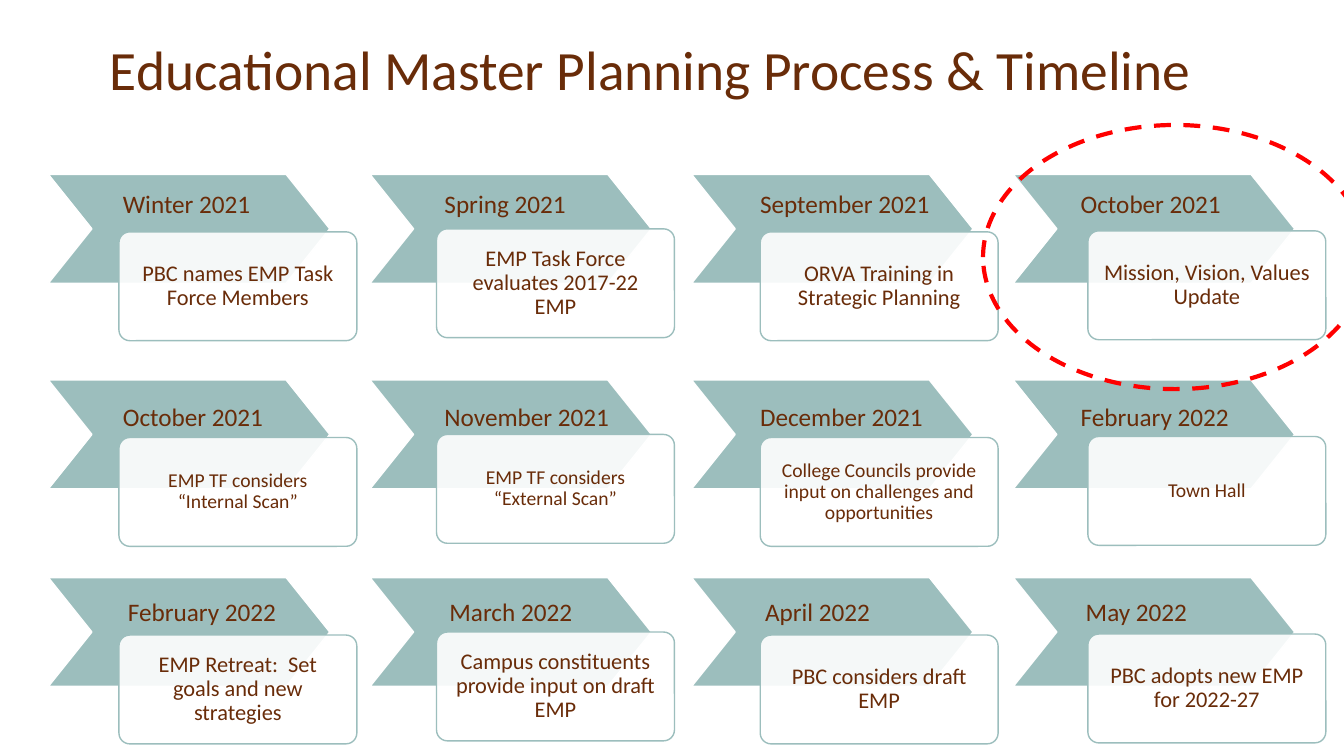
from dataclasses import dataclass
from lxml.etree import SubElement
from pptx import Presentation
from pptx.dml.color import RGBColor as Rgb
from pptx.enum.dml import MSO_LINE_DASH_STYLE as Dash
from pptx.enum.shapes import MSO_AUTO_SHAPE_TYPE as Kind
from pptx.enum.text import MSO_ANCHOR as Anchor, MSO_AUTO_SIZE as Fit, PP_ALIGN as Align
from pptx.oxml.ns import qn
from pptx.util import Inches, Pt

TITLE = "Educational Master Planning Process & Timeline"

STEPS = [
    [
        ("Winter 2021", 1.48, "PBC names EMP Task Force Members"),
        ("Spring 2021", 1.42, "EMP Task Force evaluates 2017-22 EMP"),
        ("September 2021", 1.9, "ORVA Training in Strategic Planning"),
        ("October 2021", 1.61, "Mission, Vision, Values Update"),
    ],
    [
        ("October 2021", 1.61, "EMP TF considers “Internal Scan”"),
        ("November 2021", 1.85, "EMP TF considers “External Scan”"),
        ("December 2021", 1.84, "College Councils provide input on challenges and opportunities"),
        ("February 2022", 1.69, "Town Hall"),
    ],
    [
        ("February 2022", 1.69, "EMP Retreat:  Set goals and new strategies"),
        ("March 2022", 1.43, "Campus constituents provide input on draft EMP"),
        ("April 2022", 1.25, "PBC considers draft EMP"),
        ("May 2022", 1.22, "PBC adopts new EMP for 2022-27"),
    ],
]


@dataclass(frozen=True)
class Theme:
    font: str = "Calibri"
    ink: str = "692C09"
    teal: str = "9CBEBD"
    white: str = "FFFFFF"
    red: str = "FF0000"
    title: float = 39.6
    date: int = 18
    large: int = 16
    small: int = 14


LOOK = Theme()
WIDE, HIGH = 13.33, 7.5
LEFT, PITCH = 0.48, 3.19
ARROW, CARD, TALL = 2.79, 2.36, 1.08
CARDS = [(0.7, 0.57), (0.66, 0.54), (0.68, 0.57), (0.74, 0.56)]
DATES = [0.64, 0.64, 0.58, 0.57]
ROWS = [
    (1.73, 0, 0.09, LOOK.large, 0.12),
    (3.77, 0, 0.16, LOOK.small, 0.11),
    (5.73, 0.05, 0.14, LOOK.large, 0.12),
]


def write(frame, text, size, align=Align.LEFT, space=1.0):
    para = frame.paragraphs[0]
    para.alignment = align
    para.line_spacing = space
    run = para.add_run()
    run.text = text
    run.font.name = LOOK.font
    run.font.size = Pt(size)
    run.font.color.rgb = Rgb.from_string(LOOK.ink)


def draw(shapes, kind, box, fill, line, weight=1, bend=None):
    shape = shapes.add_shape(kind, *map(Inches, box))
    shape.shadow.inherit = False
    if fill:
        shape.fill.solid()
        shape.fill.fore_color.rgb = Rgb.from_string(fill)
    else:
        shape.fill.background()
    shape.line.color.rgb = Rgb.from_string(line)
    shape.line.width = Pt(weight)
    if bend is not None:
        shape.adjustments[0] = bend
    return shape


def add_card(shapes, box, text, size, inset):
    card = draw(shapes, Kind.ROUNDED_RECTANGLE, box, LOOK.white, LOOK.teal, bend=0.1)
    tint = card.fill._xPr.find(qn("a:solidFill"))[0]
    SubElement(tint, qn("a:alpha")).set("val", "90000")
    frame = card.text_frame
    frame.word_wrap = True
    frame.vertical_anchor = Anchor.MIDDLE
    frame.margin_left = frame.margin_right = Inches(inset)
    frame.margin_top = frame.margin_bottom = Inches(inset)
    write(frame, text, size, Align.CENTER, 0.9)


def add_date(shapes, x, y, width, text):
    frame = shapes.add_textbox(*map(Inches, (x, y, width, 0.4))).text_frame
    frame.word_wrap = False
    frame.auto_size = Fit.SHAPE_TO_FIT_TEXT
    write(frame, text, LOOK.date)


def add_row(shapes, steps, row):
    top, shift, drop, size, inset = row
    group = shapes.add_group_shape().shapes
    for col, (date, width, text) in enumerate(steps):
        x = LEFT + col * PITCH
        dx, dy = CARDS[col]
        draw(group, Kind.CHEVRON, (x, top, ARROW, TALL), LOOK.teal, LOOK.white, bend=0.4)
        add_card(group, (x + dx, top + dy, CARD, TALL), text, size, inset)
        add_date(shapes, x + DATES[col] + shift, top + drop, width, date)


def main():
    deck = Presentation()
    deck.slide_width, deck.slide_height = Inches(WIDE), Inches(HIGH)
    slide = deck.slides.add_slide(deck.slide_layouts[5])
    title = slide.shapes.title
    title.left, title.top = Inches(0.99), Inches(0.19)
    title.width, title.height = Inches(11.32), Inches(1.06)
    title.text_frame.vertical_anchor = Anchor.MIDDLE
    write(title.text_frame, TITLE, LOOK.title, space=0.9)
    for steps, row in zip(STEPS, ROWS):
        add_row(slide.shapes, steps, row)
    ring = draw(slide.shapes, Kind.OVAL, (9.75, 1.24, 3.81, 2.62), None, LOOK.red, 3)
    ring.line.dash_style = Dash.DASH
    deck.save("out.pptx")


if __name__ == "__main__":
    main()
